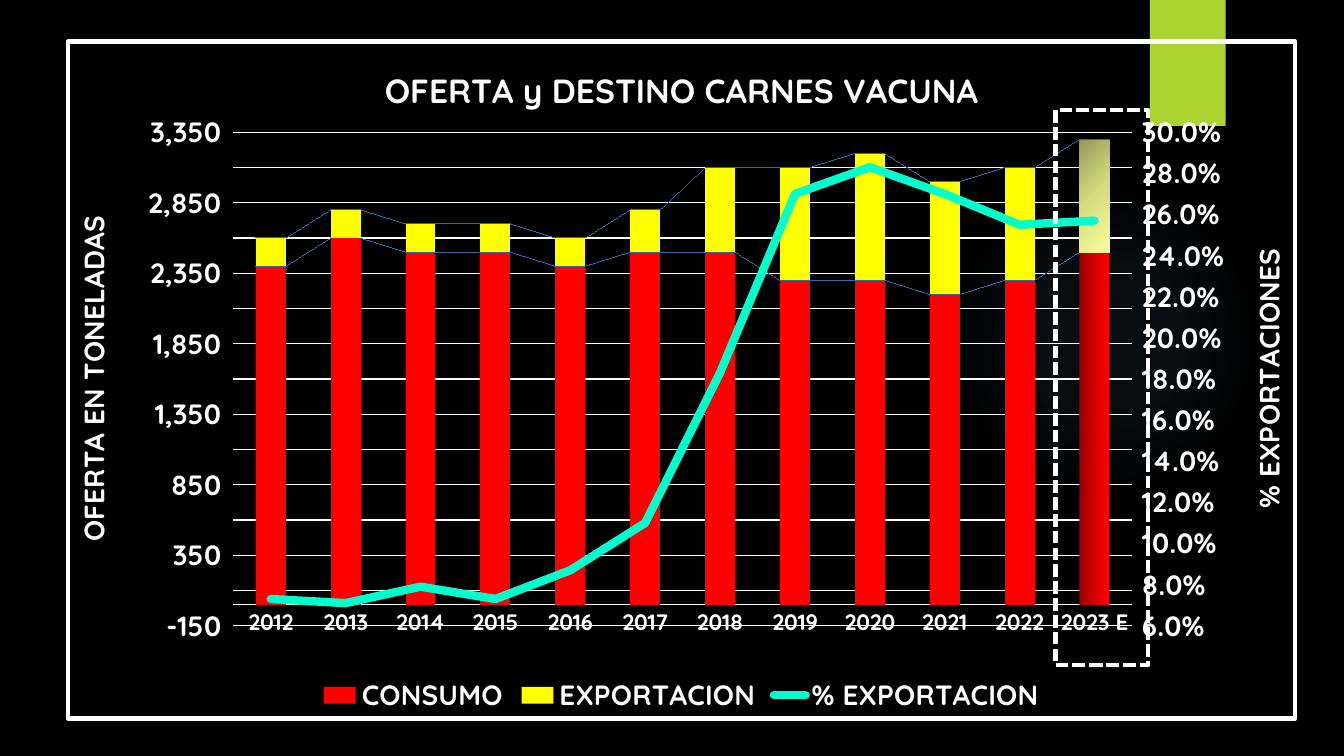
import pptx
import pptx.chart.axis
import pptx.chart.data
import pptx.dml.color
import pptx.enum.chart
import pptx.enum.dml
import pptx.enum.shapes
import pptx.oxml
import pptx.oxml.ns
import pptx.util

RGB = pptx.dml.color.RGBColor
BLACK = RGB(0x00, 0x00, 0x00)
WHITE = RGB(0xFF, 0xFF, 0xFF)
GREEN = RGB(0xAC, 0xD4, 0x33)
SKY = RGB(0x7A, 0xC4, 0xF0)
RED = RGB(0xFF, 0x00, 0x00)
YELLOW = RGB(0xFF, 0xFF, 0x00)
AQUA = RGB(0x00, 0xFF, 0xCC)
LINK_BLUE = RGB(0x44, 0x72, 0xC4)
RED_SHADES = [(0, RGB(0x97, 0x00, 0x00)), (50, RGB(0xD7, 0x00, 0x00)), (100, RED)]
YELLOW_SHADES = [(0, RGB(0x97, 0x9A, 0x59)), (50, RGB(0xD6, 0xDB, 0x7E)),
                 (100, RGB(0xFA, 0xFF, 0x9B))]

YEARS = [str(year) for year in range(2012, 2023)] + ["2023 E"]
CONSUMPTION = [2400, 2600, 2500, 2500, 2400, 2500, 2500, 2300, 2300, 2200, 2300, 2500]
EXPORTS = [200, 200, 200, 200, 200, 300, 600, 800, 900, 800, 800, 800]
EXPORT_SHARE = [0.073, 0.071, 0.079, 0.073, 0.087, 0.11,
                0.183, 0.27, 0.283, 0.27, 0.255, 0.257]
TONNES_FORMAT = '_-* #,##0_-;\\-* #,##0_-;_-* "-"??_-;_-@_'

qn = pptx.oxml.ns.qn
NAMESPACES = pptx.oxml.ns.nsdecls("a", "c")


def xml(tag, body="", attributes=""):
    return pptx.oxml.parse_xml(f"<{tag} {NAMESPACES} {attributes}>{body}</{tag}>")


def set_gradient(properties, stops, direction):
    """Replace the fill in spPr; stops are (position %, colour[, opacity %])."""
    entries = ""
    for position, colour, *opacity in stops:
        alpha = f'<a:alpha val="{opacity[0] * 1000}"/>' if opacity else ""
        entries += (f'<a:gs pos="{position * 1000}">'
                    f'<a:srgbClr val="{colour}">{alpha}</a:srgbClr></a:gs>')
    gradient = xml("a:gradFill", f"<a:gsLst>{entries}</a:gsLst>{direction}")
    solid = properties.find(qn("a:solidFill"))
    properties.replace(solid, gradient)


class Deck:
    """One slide on a grid of 32 columns and 18 rows, with its text style."""
    FONT = "Quicksand"
    COLUMNS, ROWS = 32, 18

    def __init__(self):
        self.file = pptx.Presentation()
        self.file.slide_width = pptx.util.Inches(13.33)
        self.file.slide_height = pptx.util.Inches(7.5)
        self.slide = self.file.slides.add_slide(self.file.slide_layouts[6])
        self.slide.background.fill.solid()
        self.slide.background.fill.fore_color.rgb = BLACK

    def box(self, column, row, columns, rows):
        across = self.file.slide_width / self.COLUMNS
        down = self.file.slide_height / self.ROWS
        return [round(n) for n in (column * across, row * down, columns * across, rows * down)]

    def style(self, font, size):
        font.name, font.size, font.bold = self.FONT, pptx.util.Pt(size), True
        font.color.rgb = WHITE

    def shape(self, kind, place, fill=None):
        shape = self.slide.shapes.add_shape(kind, *self.box(*place))
        shape.shadow.inherit = False
        shape.line.fill.background()
        if fill is None:
            shape.fill.background()
        else:
            shape.fill.solid()
            shape.fill.fore_color.rgb = fill
        return shape

    def outline(self, line, colour, width):
        line.color.rgb = colour
        line.width = pptx.util.Pt(width)

    def title(self, owner, text, size, upright=True):
        frame = owner.text_frame
        frame.text = text
        self.style(frame.paragraphs[0].font, size)
        if not upright:
            body = frame._txBody.find(qn("a:bodyPr"))
            body.set("rot", "-5400000")
            body.set("vert", "horz")

    def axis(self, axis, size, number_format=None, title=None):
        self.style(axis.tick_labels.font, size)
        axis.minor_tick_mark = pptx.enum.chart.XL_TICK_MARK.NONE
        axis.major_tick_mark = pptx.enum.chart.XL_TICK_MARK.NONE
        if number_format:
            axis.tick_labels.number_format = number_format
            axis.tick_labels.number_format_is_linked = False
            axis.format.line.fill.background()
        if title:
            self.title(axis.axis_title, title, size, upright=False)

    def stacked_columns(self, place, categories, series):
        data = pptx.chart.data.CategoryChartData()
        data.categories = categories
        for name, values, number_format in series:
            data.add_series(name, values, number_format)
        kind = pptx.enum.chart.XL_CHART_TYPE.COLUMN_STACKED
        return self.slide.shapes.add_chart(kind, *self.box(*place), data).chart


def move_last_series_to_line(chart):
    """Turn the last column series into a line and return its own value axis."""
    plot_area = chart._chartSpace.chart.plotArea
    columns = plot_area.find(qn("c:barChart"))
    series = columns.findall(qn("c:ser"))[-1]
    columns.remove(series)
    for column_only in series.findall(qn("c:invertIfNegative")):
        series.remove(column_only)
    line = xml("c:lineChart", '<c:grouping val="standard"/><c:varyColors val="0"/>'
               '<c:marker val="1"/><c:axId val="501"/><c:axId val="502"/>')
    line.insert(2, series)
    columns.addnext(line)
    hidden = xml("c:catAx", '<c:axId val="501"/><c:scaling><c:orientation val="minMax"/>'
                 '</c:scaling><c:delete val="1"/><c:axPos val="b"/>'
                 '<c:crossAx val="502"/><c:crosses val="autoZero"/>')
    right = xml("c:valAx", '<c:axId val="502"/><c:scaling><c:orientation val="minMax"/>'
                '</c:scaling><c:delete val="0"/><c:axPos val="r"/>'
                '<c:tickLblPos val="nextTo"/><c:crossAx val="501"/><c:crosses val="max"/>')
    plot_area.findall(qn("c:valAx"))[-1].addnext(right)
    right.addnext(hidden)
    return pptx.chart.axis.ValueAxis(right)


def place_plot(chart, x, y, w, h):
    plot_area = chart._chartSpace.chart.plotArea
    for old in plot_area.findall(qn("c:layout")):
        plot_area.remove(old)
    shares = "".join(f'<c:{tag} val="{share}"/>' for tag, share in zip("xywh", (x, y, w, h)))
    plot_area.insert(0, xml("c:layout", '<c:manualLayout><c:layoutTarget val="inner"/>'
                            '<c:xMode val="edge"/><c:yMode val="edge"/>'
                            f'{shares}</c:manualLayout>'))


def link_columns(plot):
    links = xml("c:serLines", '<c:spPr><a:ln w="9525"><a:solidFill>'
                f'<a:srgbClr val="{LINK_BLUE}"/></a:solidFill></a:ln></c:spPr>')
    plot._element.find(qn("c:overlap")).addnext(links)


def add_supply_chart(deck):
    chart = deck.stacked_columns((1.56, 0.94, 29.33, 16.22), YEARS, [
        ("CONSUMO", CONSUMPTION, "#,##0"),
        ("EXPORTACION", EXPORTS, "#,##0"),
        ("% EXPORTACION", EXPORT_SHARE, "0.0%")])
    deck.style(chart.font, 20)
    tonnes = chart.value_axis
    share_axis = move_last_series_to_line(chart)
    place_plot(chart, 0.135, 0.134, 0.732, 0.729)
    deck.title(chart.chart_title, "OFERTA y DESTINO CARNES VACUNA", 24)
    chart.has_legend = True
    chart.legend.position = pptx.enum.chart.XL_LEGEND_POSITION.BOTTOM
    chart.legend.include_in_layout = False
    deck.style(chart.legend.font, 20)

    deck.axis(chart.category_axis, 16)
    deck.outline(chart.category_axis.format.line, WHITE, 0.75)
    deck.axis(tonnes, 20, TONNES_FORMAT, "OFERTA EN TONELADAS")
    tonnes.minimum_scale, tonnes.maximum_scale, tonnes.major_unit = -150, 3350, 250
    deck.outline(tonnes.major_gridlines.format.line, WHITE, 0.75)
    deck.axis(share_axis, 20, "0.0%", "% EXPORTACIONES")
    share_axis.major_tick_mark = pptx.enum.chart.XL_TICK_MARK.OUTSIDE
    share_axis.minimum_scale, share_axis.maximum_scale, share_axis.major_unit = 0.06, 0.3, 0.02

    columns, share = chart.plots
    columns.gap_width, columns.overlap = 150, 100
    columns.vary_by_categories = False
    link_columns(columns)
    looks = [(RED, RED_SHADES, 0), (YELLOW, YELLOW_SHADES, 45)]
    for series, (colour, shades, angle) in zip(columns.series, looks):
        estimate = series.points[len(YEARS) - 1]
        for part in (series, estimate):
            part.format.fill.solid()
            part.format.fill.fore_color.rgb = colour
        set_gradient(series._element.find(f"{qn('c:dPt')}/{qn('c:spPr')}"), shades,
                     f'<a:lin ang="{angle * 60000}" scaled="0"/>')
    share_line = share.series[0]
    share_line.smooth = False
    share_line.marker.style = pptx.enum.chart.XL_MARKER_STYLE.NONE
    deck.outline(share_line.format.line, AQUA, 6)
    share_line.format.line._ln.set("cap", "rnd")

    border = xml("c:spPr", '<a:noFill/><a:ln w="38100"><a:solidFill>'
                 f'<a:srgbClr val="{WHITE}"/></a:solidFill></a:ln>')
    chart._chartSpace.chart.addnext(border)


def main():
    deck = Deck()
    shapes = pptx.enum.shapes.MSO_SHAPE
    glow = deck.shape(shapes.OVAL, (22.58, 4.39, 7.39, 7.39), SKY)
    set_gradient(glow._element.spPr, [(0, SKY, 7), (36, SKY, 6), (69, SKY, 0)],
                 '<a:path path="circle"><a:fillToRect l="50000" t="50000" '
                 'r="50000" b="50000"/></a:path>')
    ribbon = deck.shape(shapes.RECTANGLE, (27.38, 0, 1.8, 3), GREEN)
    ribbon._element.spPr.find(qn("a:effectLst")).append(xml(
        "a:outerShdw", f'<a:srgbClr val="{BLACK}"><a:alpha val="45000"/></a:srgbClr>',
        'blurRad="38100" dist="25400" dir="5400000" rotWithShape="0"'))
    add_supply_chart(deck)
    estimate_frame = deck.shape(shapes.RECTANGLE, (25.13, 2.62, 2.21, 13.22))
    deck.outline(estimate_frame.line, WHITE, 3)
    estimate_frame.line.dash_style = pptx.enum.dml.MSO_LINE.SQUARE_DOT
    deck.file.save("out.pptx")


if __name__ == "__main__":
    main()
